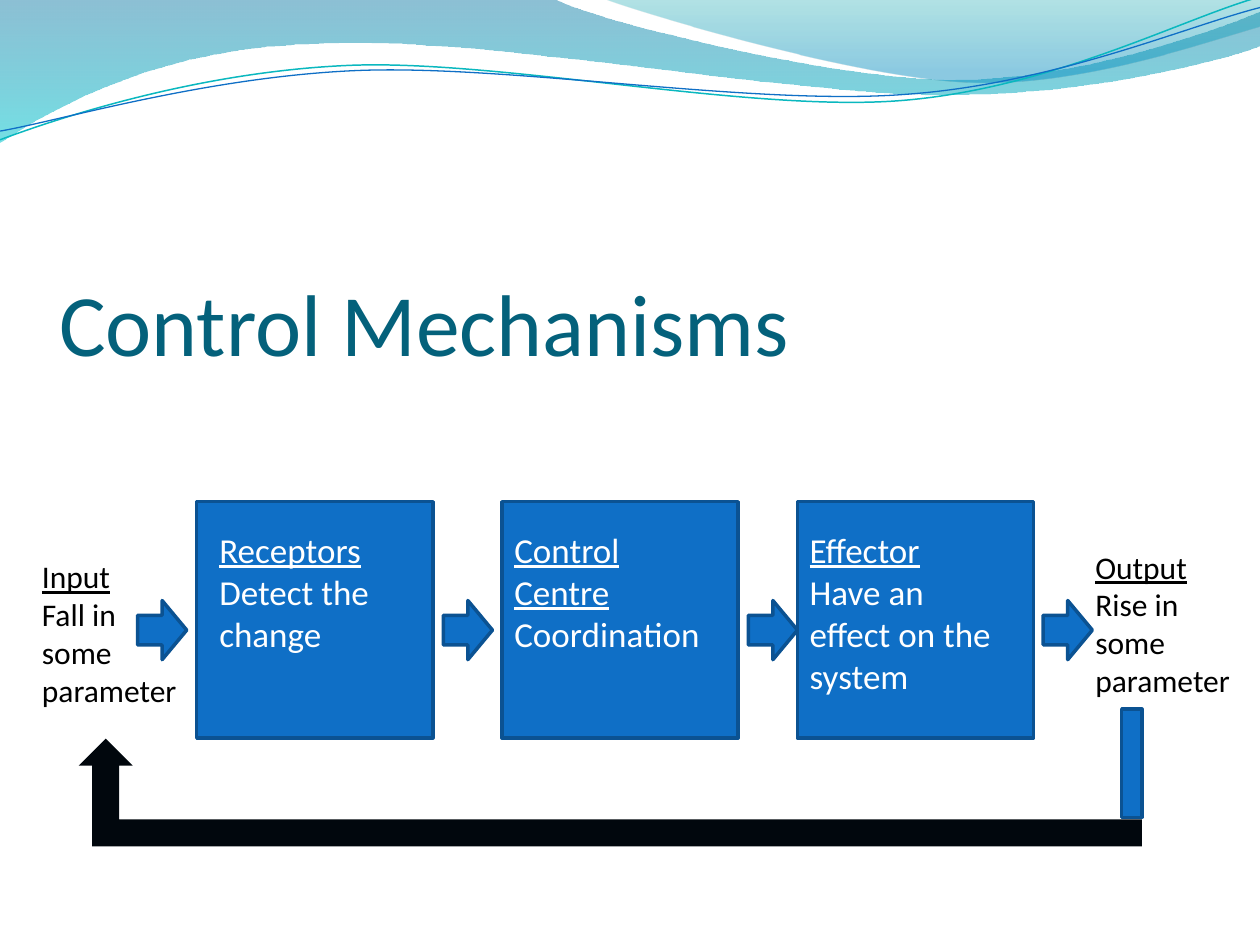
from collections import namedtuple
from dataclasses import dataclass
from itertools import chain

from lxml.etree import Element, SubElement
from pptx import Presentation
from pptx.dml.color import RGBColor
from pptx.enum.shapes import MSO_SHAPE as Preset
from pptx.enum.text import MSO_ANCHOR as Anchor, MSO_AUTO_SIZE as AutoSize
from pptx.oxml.ns import qn
from pptx.util import Pt

Box = namedtuple("Box", "left top width height")


@dataclass(frozen=True)
class Theme:
    """Colours, font and type sizes of the slide."""
    font: str = "Calibri"
    title: str = "04617B"
    blue: str = "0F6FC6"
    edge: str = "0B5292"
    teal: str = "0AB8BF"
    black: str = "000000"
    feedback: str = "01070D"
    white: str = "FFFFFF"
    back_wave: tuple = ((0, "0074A1", 45), (1, "00C6CF", 55))
    front_wave: tuple = ((0, "00A1A9", 30), (0.8, "008BBF", 45))
    title_size: int = 50
    stage_size: int = 20
    end_size: int = 18


THEME = Theme()

BACK_WAVE = [
    [(-0.5, 0)], [(317.5, -0.5)],
    [(342.7, 12.2), (478.1, 45.4), (545.8, 45.4)],
    [(614.2, 45.4), (689.8, 18.7), (720, 6.5)],
    [(720.5, 25.9)],
    [(705.6, 31.7), (626.4, 54.7), (537.1, 54)],
    [(447.8, 54), (275, 20.2), (185, 24.5)],
    [(92.9, 25.9), (33.1, 59.8), (-0.5, 81.4)],
]
FRONT_WAVE = [
    [(345.2, -0.5)],
    [(366.5, 7.9), (491, 44.6), (553.7, 46.8)],
    [(616.3, 49.7), (691.9, 23), (720, 15.1)],
    [(720, 0)],
]
TEAL_LINE = [
    [(0, 79.9)],
    [(34.6, 67), (113.8, 41), (199.4, 37.4)],
    [(284.4, 33.8), (427, 64.1), (513.4, 57.6)],
    [(599.8, 51.1), (675.4, 10.8), (718.6, -1.4)],
]
BLUE_LINE = [
    [(0, 74.9)],
    [(33.8, 69.1), (118.1, 43.9), (203.8, 40.3)],
    [(290.2, 36.7), (429.8, 60.5), (516.2, 54)],
    [(601.9, 48.2), (677.5, 15.1), (720, 4.3)],
]


def rgb(value):
    """Return the colour for a hex string."""
    return RGBColor.from_string(value)


def add_curve(slide, box, segments, closed):
    """Build a freeform whose three-point segments are cubic curves."""
    points = [(Pt(box.left + x), Pt(box.top + y)) for x, y in chain(*segments)]
    builder = slide.shapes.build_freeform(*points[0], scale=1.0)
    builder.add_line_segments(points[1:], close=closed)
    shape = builder.convert_to_shape()
    shape.shadow.inherit = False
    lines = iter(list(shape.element.iter(qn("a:lnTo"))))
    for segment in segments[1:]:
        members = [next(lines) for _ in segment]
        if len(members) == 3:
            curve = Element(qn("a:cubicBezTo"))
            members[0].addprevious(curve)
            for member in members:
                curve.append(member[0])
                member.getparent().remove(member)
    return shape


def add_wave(slide, box, segments, stops):
    """Draw a closed wave with a translucent vertical gradient."""
    shape = add_curve(slide, box, segments, True)
    shape.line.fill.background()
    shape.fill.gradient()
    shape.fill.gradient_angle = 270
    for stop, (position, colour, _) in zip(shape.fill.gradient_stops, stops):
        stop.position = position
        stop.color.rgb = rgb(colour)
    for element, (_, _, opacity) in zip(shape.element.iter(qn("a:srgbClr")), stops):
        SubElement(element, qn("a:alpha")).set("val", str(opacity * 1000))


def add_wave_line(slide, box, segments, colour, width):
    """Draw a thin open curve."""
    shape = add_curve(slide, box, segments, False)
    shape.fill.background()
    shape.line.color.rgb = rgb(colour)
    shape.line.width = Pt(width)


def add_preset(slide, kind, box, fill=THEME.blue, edge=THEME.edge):
    """Draw a preset shape, outlined unless edge is None."""
    shape = slide.shapes.add_shape(kind, *map(Pt, box))
    shape.shadow.inherit = False
    shape.fill.solid()
    shape.fill.fore_color.rgb = rgb(fill)
    if edge:
        shape.line.color.rgb = rgb(edge)
        shape.line.width = Pt(2)
    else:
        shape.line.fill.background()
    return shape


def add_text(slide, box, *lines, size, colour, heading=False, anchor=Anchor.TOP,
             insets=(7.2, 3.6, 7.2, 3.6), grow=True):
    """Write one paragraph per line, the first underlined if it is a heading."""
    frame = slide.shapes.add_textbox(*map(Pt, box)).text_frame
    frame.word_wrap = True
    frame.auto_size = AutoSize.SHAPE_TO_FIT_TEXT if grow else AutoSize.NONE
    frame.vertical_anchor = anchor
    (frame.margin_left, frame.margin_top,
     frame.margin_right, frame.margin_bottom) = map(Pt, insets)
    for index, line in enumerate(lines):
        paragraph = frame.add_paragraph() if index else frame.paragraphs[0]
        run = paragraph.add_run()
        run.text = line
        run.font.name = THEME.font
        run.font.size = Pt(size)
        run.font.color.rgb = rgb(colour)
        run.font.underline = heading and index == 0


def draw_header(slide, box):
    """Draw the waves along the top."""
    add_wave(slide, box, BACK_WAVE, THEME.back_wave)
    add_wave(slide, box, FRONT_WAVE, THEME.front_wave)
    add_wave_line(slide, box, TEAL_LINE, THEME.teal, 0.85)
    add_wave_line(slide, box, BLUE_LINE, THEME.blue, 0.75)


def draw_stage(slide, box, heading, detail, indent, width, height):
    """Draw one stage square with its label."""
    add_preset(slide, Preset.RECTANGLE, box)
    label = Box(box.left + indent, box.top + 11.5, width, height)
    add_text(slide, label, heading, detail, size=THEME.stage_size,
             colour=THEME.white, heading=True)


def draw_process(slide, box):
    """Draw input, three stages, output and the arrows between them."""
    stages = (
        (95.7, "Receptors", "Detect the change", 5.8, 118, 101.5),
        (270.1, "Control Centre", "Coordination", 0, 129.6, 101.5),
        (438.9, "Effector", "Have an effect on the system", 0, 129.6, 126),
    )
    for offset, *label in stages:
        draw_stage(slide, Box(box.left + offset, box.top, box.height, box.height), *label)
    for offset in (61.9, 236.6, 410.9, 579.4):
        add_preset(slide, Preset.RIGHT_ARROW,
                   Box(box.left + offset, box.top + 56.5, 28.1, 33.8))
    ends = (
        (0.2, 28.2, 95.8, "Input", "Fall in some parameter"),
        (602.1, 22.7, 101.5, "Output", "Rise in some parameter"),
    )
    for x, y, width, *lines in ends:
        add_text(slide, Box(box.left + x, box.top + y, width, 94.3), *lines,
                 size=THEME.end_size, colour=THEME.black, heading=True)


def draw_feedback(slide, box):
    """Draw the return path from output to input."""
    arrow = add_preset(slide, Preset.BENT_UP_ARROW,
                       Box(box.left, box.top + 16.9, box.width, box.height - 16.9),
                       fill=THEME.feedback, edge=None)
    arrow.element.spPr.find(qn("a:xfrm")).set("flipH", "1")
    add_preset(slide, Preset.RECTANGLE,
               Box(box.left + box.width - 11.5, box.top, 11.5, 61.9))


def main():
    """Build and save the slide."""
    presentation = Presentation()
    presentation.slide_width, presentation.slide_height = Pt(720), Pt(540)
    slide = presentation.slides.add_slide(presentation.slide_layouts[6])
    draw_header(slide, Box(0, 0, 720, 82))
    add_text(slide, Box(33.8, 123.8, 648, 90), "Control Mechanisms",
             size=THEME.title_size, colour=THEME.title, anchor=Anchor.BOTTOM,
             insets=(0, 3.6, 0, 0), grow=False)
    draw_process(slide, Box(16.7, 286.7, 703.3, 135))
    draw_feedback(slide, Box(45, 405.2, 607.5, 78.5))
    presentation.save("out.pptx")


if __name__ == "__main__":
    main()
